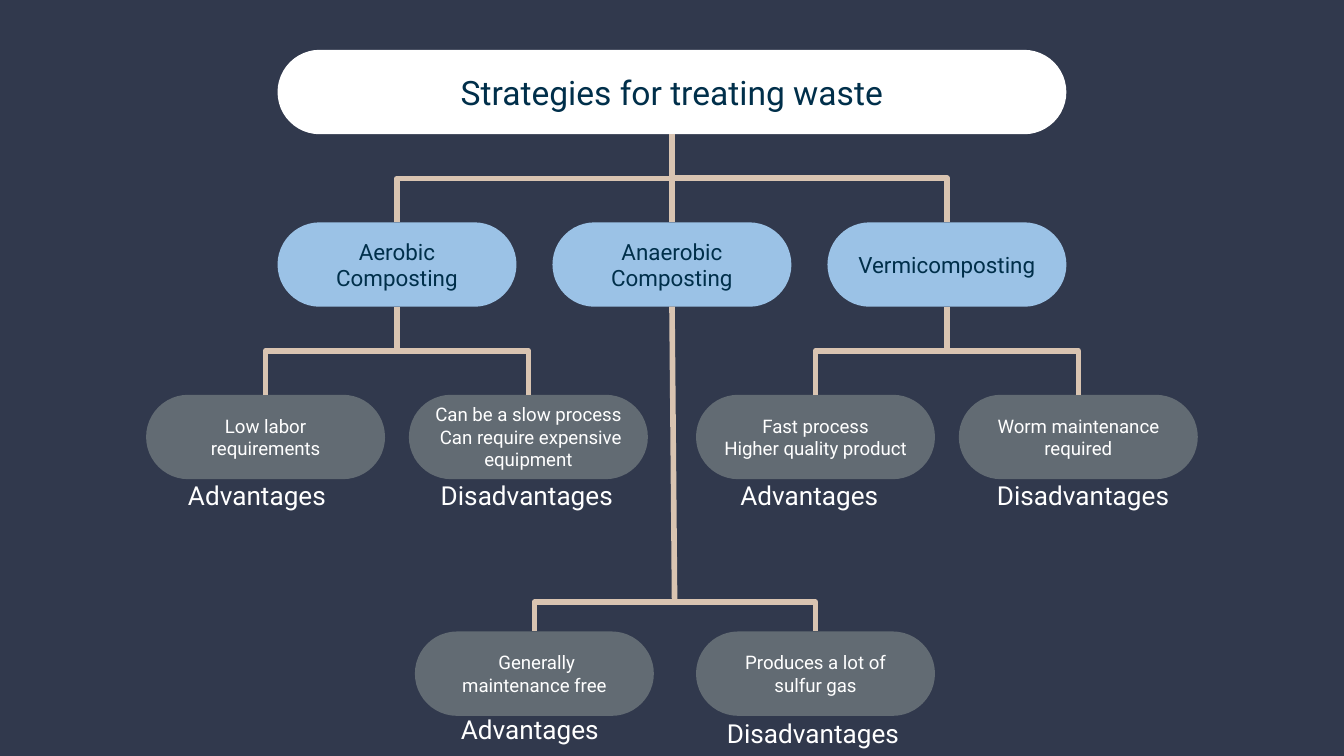
from pptx import Presentation
from pptx.dml.color import RGBColor
from pptx.enum.shapes import MSO_CONNECTOR, MSO_SHAPE
from pptx.enum.text import MSO_ANCHOR, PP_ALIGN
from pptx.oxml.ns import qn
from pptx.util import Pt

ROUNDED = MSO_SHAPE.ROUNDED_RECTANGLE
STRAIGHT = MSO_CONNECTOR.STRAIGHT
ELBOW = MSO_CONNECTOR.ELBOW
CENTER = PP_ALIGN.CENTER
LEFT = PP_ALIGN.LEFT
MIDDLE = MSO_ANCHOR.MIDDLE
TOP = MSO_ANCHOR.TOP

FONT = "Roboto"
NAVY, WHITE, BLUE = "31394D", "FFFFFF", "9BC2E6"
GRAY, SAND, INK = "626B73", "D9C4B1", "002F4A"

SLIDE_WIDTH, SLIDE_HEIGHT = 720, 405
CENTER_X = SLIDE_WIDTH / 2
PILL_WIDTH, PILL_HEIGHT = 128, 45.2
METHOD_PITCH = 147.3
TITLE_WIDTH = 2 * METHOD_PITCH + PILL_WIDTH
LEAF_OFFSET = 70.4
TITLE_TOP, ROW_PITCH = 26.7, 92.4
METHOD_TOP = TITLE_TOP + ROW_PITCH
LEAF_TOP = METHOD_TOP + ROW_PITCH
LOWER_LEAF_TOP = 338.3
FORK_X, FORK_Y = 361.4, 322.6
LABEL_TOP = 249.8

METHODS = ["Aerobic Composting", "Anaerobic Composting", "Vermicomposting"]
UPPER_LEAVES = [
    (0, -1, ["Low labor requirements"]),
    (0, 1, ["Can be a slow process", " Can require expensive equipment"]),
    (2, -1, ["Fast process", "Higher quality product"]),
    (2, 1, ["Worm maintenance required"]),
]
LOWER_LEAVES = [
    (286.3, [" Generally maintenance free"]),
    (436.9, ["Produces a lot of sulfur gas"]),
]
LABELS = [
    ("Advantages", 93.6, LABEL_TOP),
    ("Disadvantages", 229, LABEL_TOP),
    ("Advantages", 389.5, LABEL_TOP),
    ("Disadvantages", 527, LABEL_TOP),
    ("Advantages", 239.8, 375.1),
    ("Disadvantages", 382.3, 377.3),
]


def color(value):
    return RGBColor.from_string(value)


def write_text(shape, lines, size, text_color, alignment=CENTER, anchor=MIDDLE):
    frame = shape.text_frame
    frame.text = "\n".join(lines)
    frame.word_wrap = True
    frame.vertical_anchor = anchor
    frame.margin_left = frame.margin_right = Pt(7.2)
    frame.margin_top = frame.margin_bottom = Pt(7.2)
    for paragraph in frame.paragraphs:
        paragraph.alignment = alignment
        paragraph.font.name = FONT
        paragraph.font.size = Pt(size)
        paragraph.font.color.rgb = color(text_color)


def add_pill(slide, center_x, top, fill, width=PILL_WIDTH):
    shape = slide.shapes.add_shape(
        ROUNDED, Pt(center_x - width / 2), Pt(top), Pt(width), Pt(PILL_HEIGHT)
    )
    shape.adjustments[0] = 0.5
    shape.shadow.inherit = False
    shape.fill.solid()
    shape.fill.fore_color.rgb = color(fill)
    shape.line.fill.background()
    return shape


def add_text_pill(slide, center_x, top, fill, lines, size, text_color):
    shape = add_pill(slide, center_x, top, fill)
    write_text(shape, lines, size, text_color)
    return shape


def add_title(slide, text):
    add_pill(slide, CENTER_X, TITLE_TOP, WHITE, TITLE_WIDTH)
    title = slide.shapes.title
    title.left, title.top = Pt(CENTER_X - TITLE_WIDTH / 2), Pt(TITLE_TOP)
    title.width, title.height = Pt(TITLE_WIDTH), Pt(PILL_HEIGHT)
    write_text(title, [text], 18, INK)
    slide.shapes._spTree.append(title._element)


def add_line(slide, kind, begin_x, begin_y, end_x, end_y):
    connector = slide.shapes.add_connector(
        kind, Pt(begin_x), Pt(begin_y), Pt(end_x), Pt(end_y)
    )
    connector.line.color.rgb = color(SAND)
    connector.line.width = Pt(3)
    properties = connector._element.spPr
    properties.append(properties.makeelement(qn("a:effectLst"), {}))
    return connector


def add_branch(slide, parent_x, parent_y, child_x, child_y):
    middle_x, middle_y = (parent_x + child_x) / 2, (parent_y + child_y) / 2
    half_span = abs(child_x - parent_x) / 2
    half_drop = (child_y - parent_y) / 2
    if child_x < parent_x:
        half_drop = -half_drop
    connector = add_line(
        slide, ELBOW,
        middle_x + half_drop, middle_y - half_span,
        middle_x - half_drop, middle_y + half_span,
    )
    connector._element.spPr.find(qn("a:xfrm")).set("rot", "16200000")


def add_corner(slide, begin_x, begin_y, end_x, end_y):
    connector = add_line(slide, ELBOW, begin_x, begin_y, end_x, end_y)
    geometry = connector._element.spPr.find(qn("a:prstGeom"))
    geometry.set("prst", "bentConnector2")


def add_label(slide, text, left, top):
    width = 98 if text == "Advantages" else 109
    box = slide.shapes.add_textbox(Pt(left), Pt(top), Pt(width), Pt(30))
    write_text(box, [text], 14, WHITE, LEFT, TOP)


def main():
    presentation = Presentation()
    presentation.slide_width = Pt(SLIDE_WIDTH)
    presentation.slide_height = Pt(SLIDE_HEIGHT)
    slide = presentation.slides.add_slide(presentation.slide_layouts[5])
    slide.background.fill.solid()
    slide.background.fill.fore_color.rgb = color(NAVY)

    add_title(slide, "Strategies for treating waste")
    method_centers = [CENTER_X + step * METHOD_PITCH for step in (-1, 0, 1)]
    methods = [
        add_text_pill(slide, center_x, METHOD_TOP, BLUE, [name], 12, INK)
        for center_x, name in zip(method_centers, METHODS)
    ]
    for center_x in (method_centers[0], method_centers[2]):
        add_branch(slide, CENTER_X, TITLE_TOP + PILL_HEIGHT, center_x, METHOD_TOP)

    for method, side, lines in UPPER_LEAVES:
        parent_x = method_centers[method]
        leaf_x = parent_x + side * LEAF_OFFSET
        add_text_pill(slide, leaf_x, LEAF_TOP, GRAY, lines, 10, WHITE)
        add_branch(slide, parent_x, METHOD_TOP + PILL_HEIGHT, leaf_x, LEAF_TOP)

    for leaf_x, lines in LOWER_LEAVES:
        add_text_pill(slide, leaf_x, LOWER_LEAF_TOP, GRAY, lines, 10, WHITE)
        add_corner(slide, FORK_X, FORK_Y, leaf_x, LOWER_LEAF_TOP)

    anaerobic = methods[1]
    trunk = add_line(
        slide, STRAIGHT, CENTER_X, METHOD_TOP + PILL_HEIGHT, FORK_X, FORK_Y
    )
    trunk.begin_connect(anaerobic, 2)
    stem = add_line(slide, STRAIGHT, CENTER_X, METHOD_TOP, CENTER_X, 81.4)
    stem.begin_connect(anaerobic, 0)

    for text, left, top in LABELS:
        add_label(slide, text, left, top)

    presentation.save("out.pptx")


if __name__ == "__main__":
    main()
